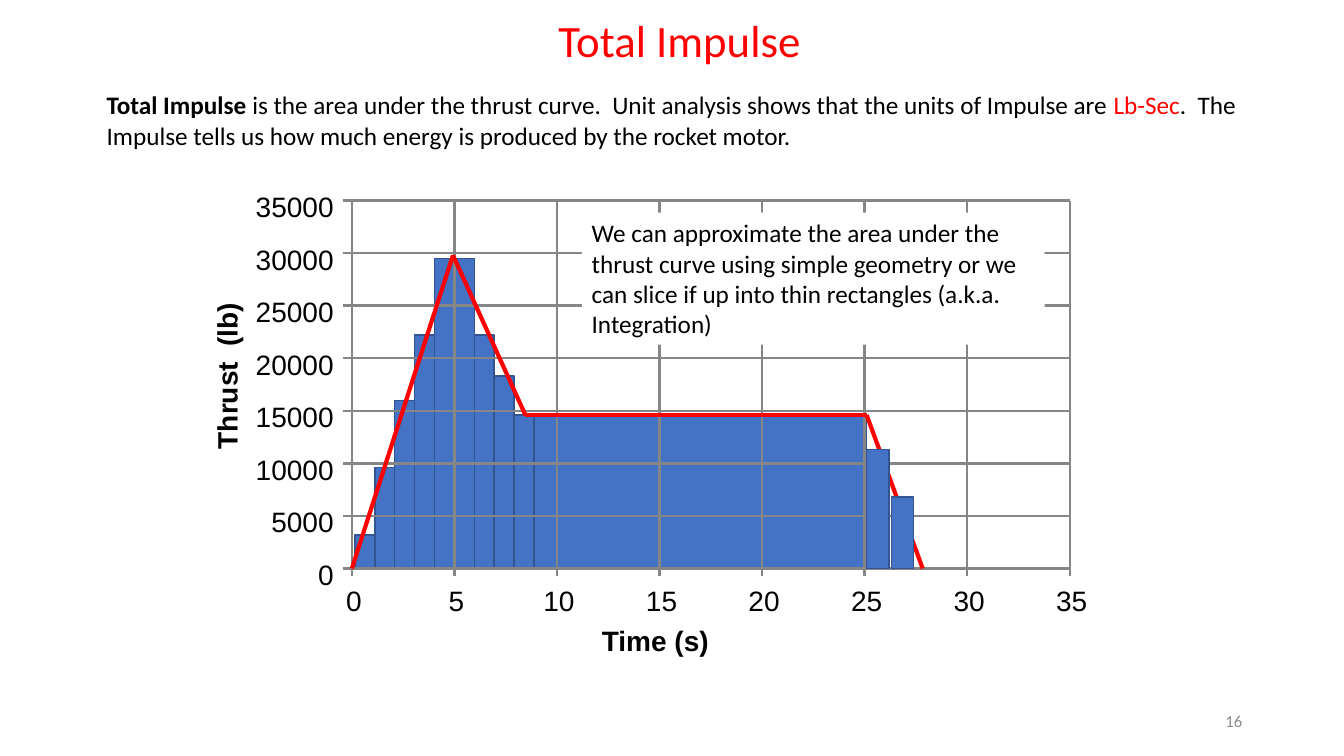
"""Build the Total Impulse slide: a thrust curve sliced into rectangles."""
import pptx
import pptx.util
import pptx.dml.color
import pptx.enum.shapes
import pptx.enum.text
import pptx.oxml

Inches = pptx.util.Inches
ALIGN = pptx.enum.text.PP_ALIGN
ANCHOR = pptx.enum.text.MSO_ANCHOR

deck = pptx.Presentation()
deck.slide_width, deck.slide_height = Inches(13.33), Inches(7.5)
page = deck.slides.add_slide(deck.slide_layouts[6])


def colour(value):
    return pptx.dml.color.RGBColor.from_string(value)


def write(text, left, top, width, height, size=18, font="Calibri", ink="000000",
          bold=False, align=ALIGN.LEFT, anchor=ANCHOR.TOP, inset=True, fill=None, turn=0):
    """Add a text box; text is a string or a list of (words, bold, ink)."""
    box = page.shapes.add_textbox(Inches(left), Inches(top), Inches(width), Inches(height))
    box.rotation = turn
    if fill:
        box.fill.solid()
        box.fill.fore_color.rgb = colour(fill)
    frame = box.text_frame
    frame.word_wrap = True
    frame.vertical_anchor = anchor
    if not inset:
        frame.margin_left = frame.margin_right = frame.margin_top = frame.margin_bottom = 0
    para = frame.paragraphs[0]
    para.alignment = align
    for words, heavy, tint in [(text, bold, ink)] if isinstance(text, str) else text:
        span = para.add_run()
        span.text = words
        span.font.name = font
        span.font.size = pptx.util.Pt(size)
        span.font.bold = heavy
        span.font.color.rgb = colour(tint)


plot_left, plot_top, plot_width, plot_height = 3.49, 1.99, 7.12, 3.65
plot_bottom = plot_top + plot_height
divisions = 7
column, row = plot_width / divisions, plot_height / divisions
seconds_per_column, pounds_per_row = 5, 5000
second, pound = column / seconds_per_column, row / pounds_per_row

first_slice, slice_width = 0.15, 0.97
slice_thrusts = [3200, 9600, 16000, 22200, 29500, 29500, 22200, 18300, 14600]
burn_slices = [(first_slice + index * slice_width, slice_width, thrust)
               for index, thrust in enumerate(slice_thrusts)]
plateau_start = first_slice + len(slice_thrusts) * slice_width
burn_slices.append((plateau_start, 25.1 - plateau_start, 14500))
tail_slices = [(25.1, 1.1, 11300), (26.3, 1.1, 6800)]

tick_seconds, tick_pounds = 0.07 / second, 0.09 / second
last_second, last_pound = divisions * seconds_per_column, divisions * pounds_per_row
grid = []
for index in range(divisions + 1):
    time, thrust = index * seconds_per_column, index * pounds_per_row
    grid.append(((-tick_pounds, thrust), (last_second, thrust)))
    grid.append(((time, -0.07 / pound), (time, last_pound)))
curve = [(0, 0), (4.93, 29800), (8.46, 14600), (25.1, 14600), (27.83, 0)]

layers = [
    (burn_slices, grid, "868686", 1.75),
    ([], list(zip(curve, curve[1:])), "FF0000", 3),
    (tail_slices, [], "FF0000", 3),
]
for slices, lines, ink, weight in layers:
    for start, duration, thrust in slices:
        bar = page.shapes.add_shape(
            pptx.enum.shapes.MSO_SHAPE.RECTANGLE,
            Inches(plot_left + start * second), Inches(plot_bottom - thrust * pound),
            Inches(duration * second), Inches(thrust * pound))
        bar.shadow.inherit = False
        bar.fill.solid()
        bar.fill.fore_color.rgb = colour("4472C4")
        bar.line.color.rgb = colour("325491")
        bar.line.width = pptx.util.Pt(1)
    for (time, thrust), (next_time, next_thrust) in lines:
        line = page.shapes.add_connector(
            pptx.enum.shapes.MSO_CONNECTOR.STRAIGHT,
            Inches(plot_left + time * second), Inches(plot_bottom - thrust * pound),
            Inches(plot_left + next_time * second), Inches(plot_bottom - next_thrust * pound))
        line.line.color.rgb = colour(ink)
        line.line.width = pptx.util.Pt(weight)
        line._element.spPr.append(pptx.oxml.parse_xml(
            '<a:effectLst xmlns:a="http://schemas.openxmlformats.org/drawingml/2006/main"/>'))

axis = dict(size=20, font="Arial", inset=False)
for index in range(divisions + 1):
    write(str(index * pounds_per_row), plot_left - 1.08, plot_bottom - index * row - 0.11,
          0.9, 0.34, align=ALIGN.RIGHT, **axis)
    write(str(index * seconds_per_column), plot_left + index * column - 0.28, plot_bottom + 0.15,
          0.6, 0.34, align=ALIGN.CENTER, **axis)
write("Time (s)", 5.7, 6.19, 1.6, 0.34, bold=True, align=ALIGN.CENTER, **axis)
write("Thrust  (lb)", 1.35, 3.56, 1.8, 0.34, bold=True, align=ALIGN.CENTER, turn=270, **axis)

write("Total Impulse", 4.71, 0.08, 4.06, 0.64, size=32, ink="FF0000", align=ALIGN.CENTER)
write([("Total Impulse ", True, "000000"),
       ("is the area under the thrust curve.  Unit analysis shows that the units of Impulse are ",
        False, "000000"),
       ("Lb-Sec", False, "FF0000"),
       (".  The Impulse tells us how much energy is produced by the rocket motor.",
        False, "000000")], 0.96, 0.84, 11.54, 0.71)
write("We can approximate the area under the thrust curve using simple geometry or we can slice "
      "if up into thin rectangles (a.k.a. Integration)", 5.77, 2.11, 4.59, 1.31, fill="FFFFFF")
write("16", 9.42, 6.95, 3, 0.4, size=12, ink="8C8C8C", align=ALIGN.RIGHT, anchor=ANCHOR.MIDDLE)

deck.save("out.pptx")
